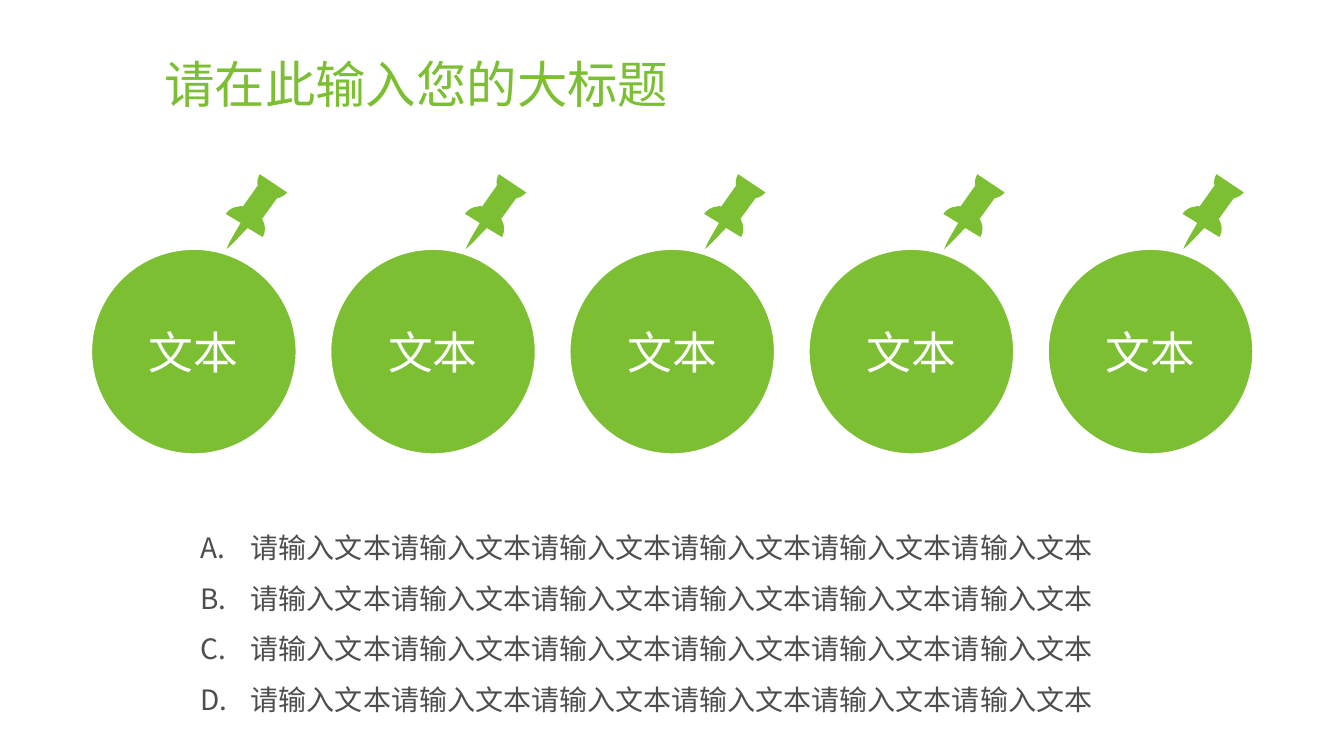
from math import cos, radians, sin

from lxml import etree
from pptx import Presentation
from pptx.dml.color import RGBColor
from pptx.enum.shapes import MSO_SHAPE
from pptx.enum.text import MSO_ANCHOR, MSO_AUTO_SIZE, PP_ALIGN
from pptx.oxml.ns import qn
from pptx.util import Pt

OVAL = MSO_SHAPE.OVAL
MIDDLE = MSO_ANCHOR.MIDDLE
NO_FIT = MSO_AUTO_SIZE.NONE
LEFT, CENTER = PP_ALIGN.LEFT, PP_ALIGN.CENTER

GREEN = RGBColor(0x7C, 0xBF, 0x33)
WHITE = RGBColor(0xFF, 0xFF, 0xFF)
GREY = RGBColor(0x4D, 0x4D, 0x4D)
FONT = "Noto Sans CJK SC"

TITLE = "请在此输入您的大标题"
CIRCLE_LABELS = ["文本"] * 5
LIST_ITEMS = ["请输入文本" * 6] * 4

CIRCLE_LEFT, CIRCLE_TOP = 65.3, 178
CIRCLE_SIZE, CIRCLE_STEP = 146.3, 170.85

PIN_TILT = -11.1
PIN_CENTER = (116.6, -28.4)
PIN_START = (120.2, -53.5)
PIN_SEGMENTS = [
    [(139.7, -40.5)],
    [(138.2, -38.4), (135.4, -36.9), (132.5, -36.2)],
    [(121.9, -21.6)],
    [(124.6, -17.3), (124.6, -12.2), (122.4, -8.6)],
    [(111.6, -15.1)],
    [(106.6, -10.1), (102.4, -5), (96.5, 0)],
    [(99.4, -7.2), (103, -12.2), (106.6, -18.7)],
    [(96, -25.2)],
    [(97.9, -28.1), (101.5, -30.2), (105.1, -30.4)],
    [(106, -31), (107.3, -31), (108.2, -30.4)],
    [(118.8, -45.4)],
    [(118.1, -48.2), (118.8, -51.1), PIN_START],
]


def place(shape, left, top, width, height):
    box = {"left": left, "top": top, "width": width, "height": height}
    for name, value in box.items():
        setattr(shape, name, Pt(value))


def write(para, text, size, color, **layout):
    span = para.add_run()
    span.text = text
    for name, value in {"name": FONT, "size": Pt(size)}.items():
        setattr(span.font, name, value)
    span.font.color.rgb = color
    etree.SubElement(span.font._element, qn("a:ea"), typeface=FONT)
    for name, value in layout.items():
        setattr(para, name, value)


def fill_green(shape):
    shape.shadow.inherit = False
    shape.fill.solid()
    shape.fill.fore_color.rgb = GREEN


def add_title(page):
    title = page.shapes.title
    place(title, 110.2, 28.8, 763.2, 67)
    frame = title.text_frame
    frame.auto_size = NO_FIT
    frame.vertical_anchor = MIDDLE
    write(frame.paragraphs[0], TITLE, 36, GREEN, alignment=LEFT, line_spacing=0.9)


def add_circle(page, left, label):
    circle = page.shapes.add_shape(
        OVAL, Pt(left), Pt(CIRCLE_TOP), Pt(CIRCLE_SIZE), Pt(CIRCLE_SIZE))
    fill_green(circle)
    circle.line.color.rgb = WHITE
    circle.line.width = Pt(1)
    circle.text_frame.vertical_anchor = MIDDLE
    write(circle.text_frame.paragraphs[0], label, 32, WHITE, alignment=CENTER)


def upright_point(point, left):
    angle = radians(-PIN_TILT)
    x, y = (value - middle for value, middle in zip(point, PIN_CENTER))
    return (Pt(left + PIN_CENTER[0] + x * cos(angle) - y * sin(angle)),
            Pt(CIRCLE_TOP + PIN_CENTER[1] + x * sin(angle) + y * cos(angle)))


def bend_curves(pin):
    lines = iter(list(pin._element.iter(qn("a:lnTo"))))
    for segment in PIN_SEGMENTS:
        parts = [next(lines) for _ in segment]
        if len(parts) == 3:
            curve = etree.Element(qn("a:cubicBezTo"))
            parts[0].addprevious(curve)
            for part in parts:
                curve.append(part[0])
                part.getparent().remove(part)


def add_pin(page, left):
    builder = page.shapes.build_freeform(*upright_point(PIN_START, left))
    points = [point for segment in PIN_SEGMENTS for point in segment]
    builder.add_line_segments([upright_point(point, left) for point in points], close=True)
    pin = builder.convert_to_shape()
    bend_curves(pin)
    pin.rotation = PIN_TILT
    fill_green(pin)
    pin.line.fill.background()


def add_lettered_list(page):
    box = page.shapes.add_textbox(Pt(136.1), Pt(363.6), Pt(687.6), Pt(166.3))
    frame = box.text_frame
    frame.word_wrap = True
    for index, item in enumerate(LIST_ITEMS):
        para = frame.add_paragraph() if index else frame.paragraphs[0]
        properties = para._p.get_or_add_pPr()
        properties.set("marL", str(Pt(36)))
        properties.set("indent", str(-Pt(36)))
        etree.SubElement(properties, qn("a:buFont"), typeface=FONT)
        etree.SubElement(properties, qn("a:buAutoNum"), type="alphaUcPeriod")
        write(para, item, 20, GREY, line_spacing=1.5)


def main():
    deck = Presentation()
    deck.slide_width, deck.slide_height = Pt(960), Pt(540)
    page = deck.slides.add_slide(deck.slide_layouts[5])
    add_title(page)
    for index, label in enumerate(CIRCLE_LABELS):
        left = CIRCLE_LEFT + index * CIRCLE_STEP
        add_circle(page, left, label)
        add_pin(page, left)
    add_lettered_list(page)
    deck.save("out.pptx")


if __name__ == "__main__":
    main()
